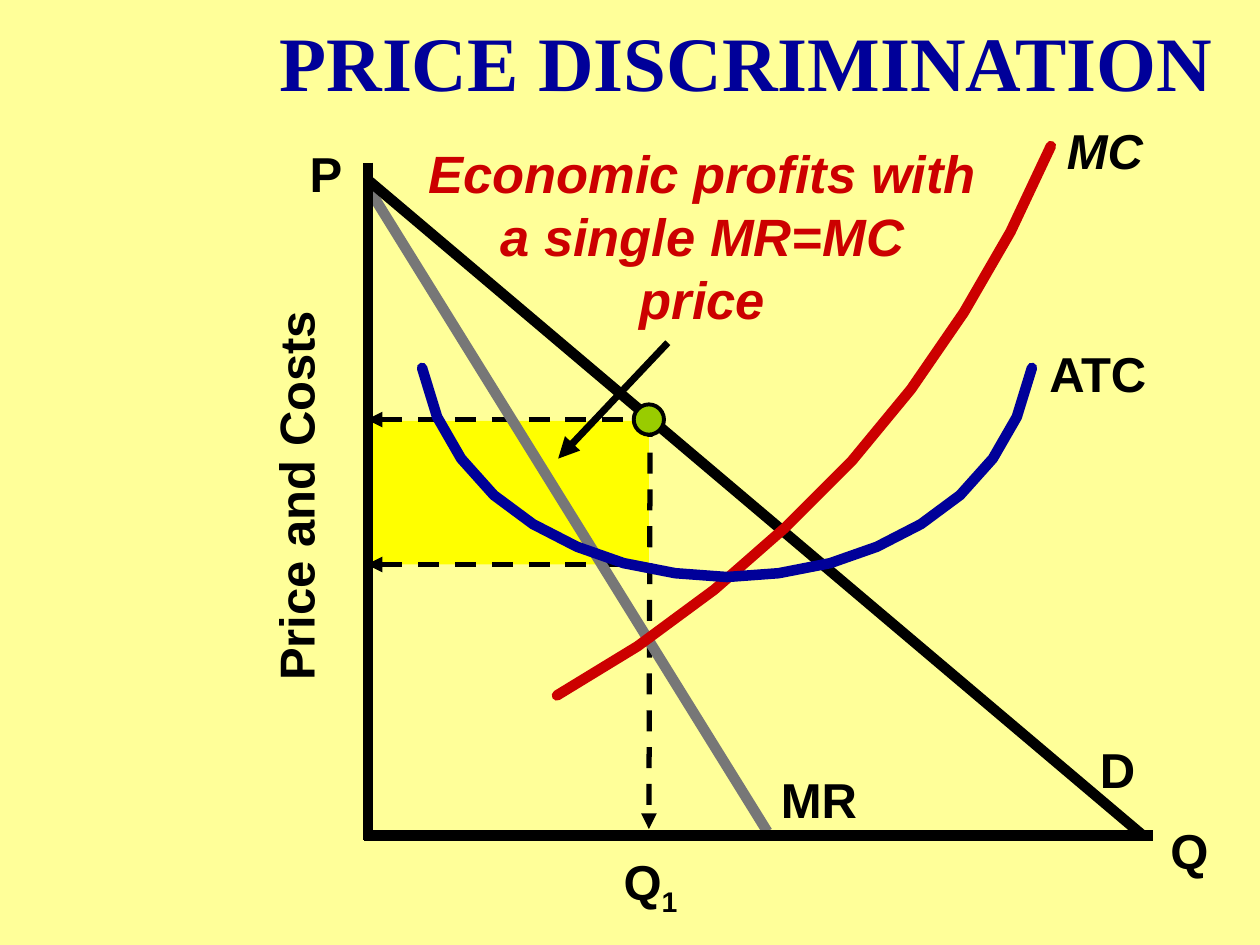
import pptx
import pptx.util
import pptx.dml.color
import pptx.enum.dml
import pptx.enum.shapes
import pptx.enum.text
import pptx.oxml
import pptx.oxml.ns

Inches = pptx.util.Inches
Pt = pptx.util.Pt
RGBColor = pptx.dml.color.RGBColor
SHAPE = pptx.enum.shapes.MSO_SHAPE
ALIGN = pptx.enum.text.PP_ALIGN

BLACK = RGBColor(0x00, 0x00, 0x00)
GRAY = RGBColor(0x77, 0x77, 0x77)
RED = RGBColor(0xCC, 0x00, 0x00)
NAVY = RGBColor(0x00, 0x00, 0x99)
GREEN = RGBColor(0x99, 0xCC, 0x00)
YELLOW = RGBColor(0xFF, 0xFF, 0x00)
CREAM = RGBColor(0xFF, 0xFF, 0x99)

MC_POINTS = [(4.42, 5.52), (5.06, 5.13), (5.67, 4.68), (6.23, 4.19), (6.76, 3.66),
             (7.23, 3.09), (7.65, 2.48), (8.02, 1.84), (8.34, 1.16)]
ATC_CENTER = 5.77
ATC_LEFT = [(3.35, 2.92), (3.47, 3.31), (3.66, 3.64), (3.92, 3.93), (4.23, 4.16),
            (4.58, 4.34), (4.95, 4.47), (5.36, 4.55)]
ATC_RIGHT = [(2 * ATC_CENTER - x, y) for x, y in reversed(ATC_LEFT)]
ATC_POINTS = ATC_LEFT + [(ATC_CENTER, 4.58)] + ATC_RIGHT


def add_text(slide, text, left, top, width, height=0.56, size=28, color=BLACK,
             font="Arial", italic=False, align=ALIGN.LEFT, rotation=0, subscript=""):
    sp = slide.shapes.add_textbox(Inches(left), Inches(top), Inches(width), Inches(height))
    sp.rotation = rotation
    tf = sp.text_frame
    tf.word_wrap = False
    tf.auto_size = pptx.enum.text.MSO_AUTO_SIZE.SHAPE_TO_FIT_TEXT
    for i, line in enumerate(text.split("\n")):
        p = tf.add_paragraph() if i else tf.paragraphs[0]
        p.alignment = align
        for part in filter(None, (line, subscript)):
            r = p.add_run()
            r.text = part
            f = r.font
            f.name, f.size, f.bold, f.italic = font, Pt(size), True, italic
            f.color.rgb = color
    if subscript:
        r._r.get_or_add_rPr().set("baseline", "-25000")


def add_line(slide, start, end, width=6, color=BLACK, dashed=False, arrow=None):
    sp = slide.shapes.add_connector(pptx.enum.shapes.MSO_CONNECTOR.STRAIGHT,
                                    *map(Inches, start + end))
    sp.line.width = Pt(width)
    sp.line.color.rgb = color
    if dashed:
        sp.line.dash_style = pptx.enum.dml.MSO_LINE.DASH
    if arrow:
        sp.line._get_or_add_ln().append(pptx.oxml.parse_xml(
            f'<a:{arrow} {pptx.oxml.ns.nsdecls("a")} type="triangle"/>'))
    sp._element.spPr.append(
        pptx.oxml.parse_xml(f'<a:effectLst {pptx.oxml.ns.nsdecls("a")}/>'))


def add_curve(slide, points, color):
    vertices = [(Inches(x), Inches(y)) for x, y in points]
    builder = slide.shapes.build_freeform(*vertices[0])
    builder.add_line_segments(vertices[1:], close=False)
    sp = builder.convert_to_shape()
    sp.shadow.inherit = False
    sp.fill.background()
    sp.line.color.rgb = color
    sp.line.width = Pt(6)
    ln = sp.line._get_or_add_ln()
    ln.set("cap", "rnd")
    ln.append(pptx.oxml.parse_xml(f'<a:round {pptx.oxml.ns.nsdecls("a")}/>'))


def add_figure(slide, kind, left, top, width, height, fill, outline=None):
    sp = slide.shapes.add_shape(kind, *map(Inches, (left, top, width, height)))
    sp.shadow.inherit = False
    sp.fill.solid()
    sp.fill.fore_color.rgb = fill
    if outline is None:
        sp.line.fill.background()
    else:
        sp.line.color.rgb = outline
        sp.line.width = Pt(2.25)


def main():
    prs = pptx.Presentation()
    prs.slide_width, prs.slide_height = Inches(10), Inches(7.5)
    slide = prs.slides.add_slide(prs.slide_layouts[6])
    slide.background.fill.solid()
    slide.background.fill.fore_color.rgb = CREAM

    add_figure(slide, SHAPE.RECTANGLE, 2.9, 3.34, 2.25, 1.14, YELLOW)
    for y in (3.33, 4.48):
        add_line(slide, (2.91, y), (5.13, y), width=3, dashed=True, arrow="headEnd")
    add_line(slide, (5.16, 3.3), (5.15, 6.58), width=3, dashed=True, arrow="tailEnd")
    add_line(slide, (2.94, 1.52), (6.09, 6.6), color=GRAY)
    add_line(slide, (2.91, 1.42), (9.07, 6.63))

    add_curve(slide, MC_POINTS, RED)
    add_curve(slide, ATC_POINTS, NAVY)

    for text, left, top, width in (("Q", 9.19, 6.46, 0.5), ("D", 8.63, 5.82, 0.48),
                                   ("MR", 6.1, 6.06, 0.84), ("ATC", 8.23, 2.68, 1.02),
                                   ("P", 2.36, 1.09, 0.46)):
        add_text(slide, text, left, top, width)
    add_text(slide, "MC", 8.37, 0.91, 0.84, italic=True)
    add_text(slide, "Q", 4.85, 6.71, 0.65, subscript="1")
    add_text(slide, "Price and Costs", 0.77, 3.65, 3.14, rotation=270)
    add_text(slide, "Economic profits with\na single MR=MC\nprice", 3.3, 1.07, 4.55, 1.6,
             size=30, color=RED, italic=True, align=ALIGN.CENTER)
    add_line(slide, (5.3, 2.72), (4.43, 3.64), width=4, arrow="tailEnd")

    add_line(slide, (2.92, 1.29), (2.92, 6.67))
    add_line(slide, (2.89, 6.63), (9.15, 6.63))
    add_text(slide, "PRICE DISCRIMINATION", 2.1, 0.07, 7.65, 0.83, size=44, color=NAVY,
             font="Times New Roman", align=ALIGN.CENTER)
    add_figure(slide, SHAPE.OVAL, 5.03, 3.21, 0.24, 0.24, GREEN, BLACK)

    prs.save("out.pptx")


if __name__ == "__main__":
    main()
